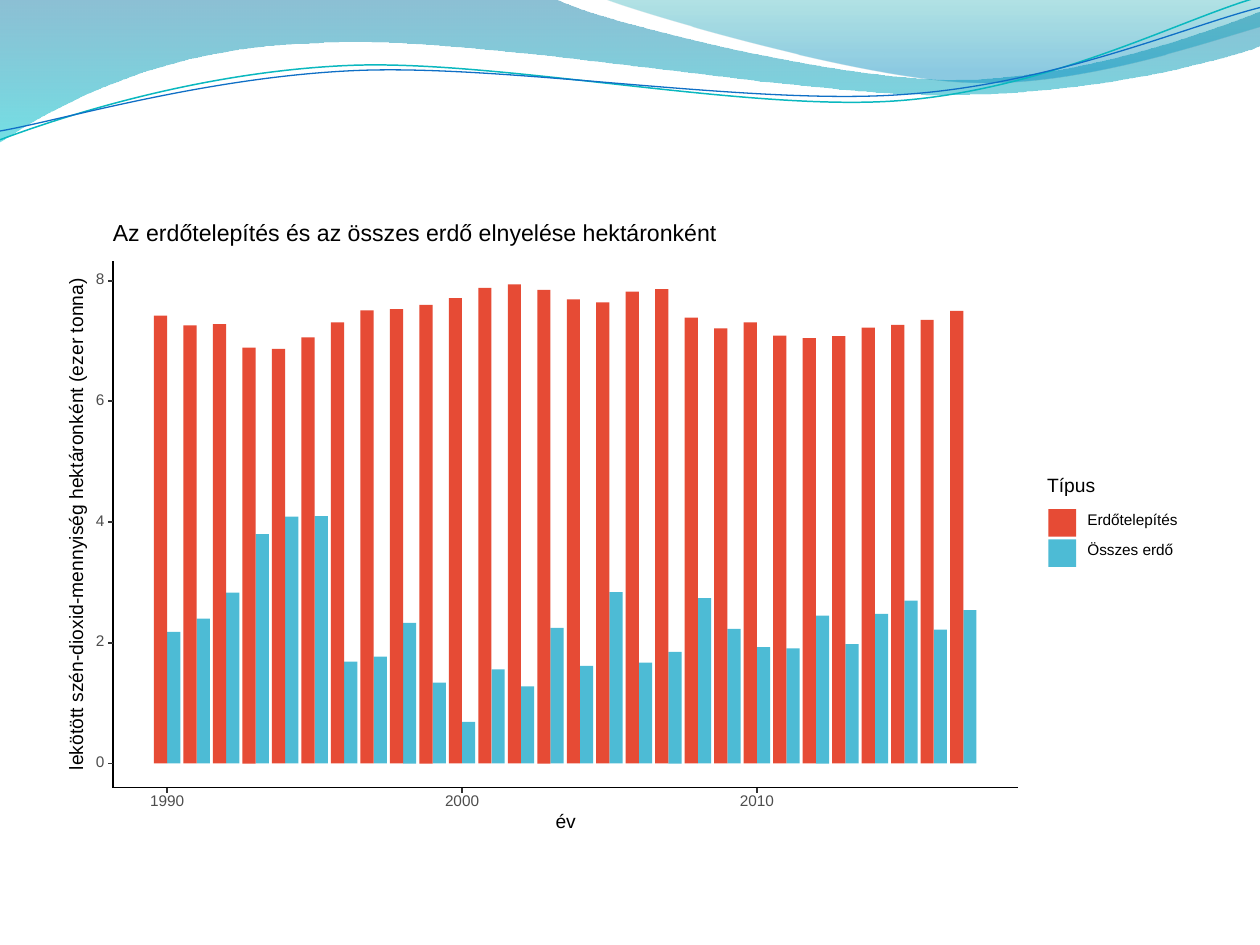
from typing import NamedTuple

from lxml.etree import SubElement
from pptx import Presentation
from pptx.dml.color import RGBColor
from pptx.enum.shapes import MSO_CONNECTOR, MSO_SHAPE
from pptx.enum.text import MSO_ANCHOR, PP_ALIGN
from pptx.oxml.ns import qn
from pptx.util import Emu, Inches, Pt

BLACK = RGBColor(0x00, 0x00, 0x00)
TICK_GREY = RGBColor(0x33, 0x33, 0x33)
LABEL_GREY = RGBColor(0x4D, 0x4D, 0x4D)
RED = RGBColor(0xE6, 0x4B, 0x35)
BLUE = RGBColor(0x4D, 0xBB, 0xD5)
TEAL_LINE = RGBColor(0x0A, 0xB8, 0xBF)
BLUE_LINE = RGBColor(0x0F, 0x6F, 0xC6)
DEEP_BLUE = RGBColor(0x00, 0x74, 0xA1)
CYAN = RGBColor(0x00, 0xC6, 0xCF)
TEAL = RGBColor(0x00, 0xA1, 0xA9)
SKY_BLUE = RGBColor(0x00, 0x8B, 0xBF)

# The slide is a grid of 100 columns by 75 rows of square cells.
SLIDE_WIDTH, SLIDE_HEIGHT = Inches(10), Inches(7.5)
CELL = SLIDE_WIDTH / 100


class Box(NamedTuple):
    left: float
    top: float
    width: float
    height: float


class Label(NamedTuple):
    text: str
    box: Box
    size: float
    color: RGBColor = BLACK
    alignment: PP_ALIGN = PP_ALIGN.LEFT
    rotation: int = 0


class Stop(NamedTuple):
    position: float
    color: RGBColor
    opacity: int


class Wave(NamedTuple):
    """Each step is one point for a straight edge or three for a cubic curve."""
    start: tuple
    steps: list
    stops: tuple = ()
    line_color: RGBColor | None = None
    line_width: float = 0


class Series(NamedTuple):
    name: str
    color: RGBColor
    values: tuple


AXIS_LEFT, AXIS_RIGHT, AXIS_TOP, AXIS_BOTTOM = 9, 80.8, 20.7, 62.5
TICK = 0.4
FIRST_YEAR, YEARS = 1990, 28
FIRST_YEAR_X, YEAR_STEP, BAR_WIDTH = 13.27, 2.34, 1.05
ZERO_Y, UNIT = 60.6, 4.79

SERIES = [
    Series("Erdőtelepítés", RED, (
        7.42, 7.26, 7.28, 6.89, 6.87, 7.06, 7.31, 7.51, 7.53, 7.6, 7.71, 7.88, 7.94, 7.85,
        7.69, 7.64, 7.82, 7.86, 7.39, 7.21, 7.31, 7.09, 7.05, 7.08, 7.22, 7.27, 7.35, 7.5)),
    Series("Összes erdő", BLUE, (
        2.18, 2.4, 2.83, 3.8, 4.09, 4.1, 1.69, 1.77, 2.33, 1.34, 0.69, 1.56, 1.28, 2.25,
        1.62, 2.84, 1.67, 1.85, 2.74, 2.23, 1.93, 1.91, 2.45, 1.98, 2.48, 2.7, 2.22, 2.54)),
]

WAVES = [
    Wave((0, 0), [
        [(44, -0.1)], [(47.6, 1.7), (66.4, 6.3), (75.8, 6.3)],
        [(85.3, 6.3), (95.8, 2.6), (100, 0.9)], [(100.1, 3.6)],
        [(98.3, 4.4), (87, 7.6), (74.6, 7.5)], [(62.2, 7.5), (38.2, 2.8), (25.7, 3.4)],
        [(12.9, 3.6), (4.6, 8.3), (-0.1, 11.3)],
    ], (Stop(0, DEEP_BLUE, 45), Stop(1, CYAN, 55))),
    Wave((47.9, -0.1), [
        [(50.9, 1.1), (68.2, 6.2), (76.9, 6.5)], [(85.6, 6.9), (96.1, 3.2), (100, 2.1)],
        [(100, 0)],
    ], (Stop(0, TEAL, 30), Stop(0.8, SKY_BLUE, 45))),
    Wave((0, 11.1), [
        [(4.8, 9.3), (15.8, 5.7), (27.7, 5.2)], [(39.5, 4.7), (59.3, 8.9), (71.3, 8)],
        [(83.3, 7.1), (93.8, 1.5), (99.8, -0.2)],
    ], line_color=TEAL_LINE, line_width=0.85),
    Wave((0, 10.4), [
        [(4.7, 9.6), (16.4, 6.1), (28.3, 5.6)], [(40.3, 5.1), (59.7, 8.4), (71.7, 7.5)],
        [(83.6, 6.7), (94.1, 2.1), (100, 0.6)],
    ], line_color=BLUE_LINE, line_width=0.75),
]

LABELS = [
    Label("év", Box(43.9, 64.75, 2, 1.1), 11, alignment=PP_ALIGN.CENTER),
    Label("lekötött szén-dioxid-mennyiség hektáronként (ezer tonna)",
          Box(-13.85, 40.9, 40, 1.4), 11, alignment=PP_ALIGN.CENTER, rotation=270),
    Label("Típus", Box(83.1, 37.95, 4.2, 1.4), 11),
    Label("Az erdőtelepítés és az összes erdő elnyelése hektáronként",
          Box(8.95, 17.8, 48.5, 1.7), 13.2),
]


def cells(count: float) -> Emu:
    return Emu(round(count * CELL))


def place(box: Box) -> list[Emu]:
    return [cells(length) for length in box]


def bend_edges(path, steps: list) -> None:
    """Join each run of three straight edges that stands for a curve into one curve."""
    edges = iter(path.findall(qn("a:lnTo")))
    for step in steps:
        group = [next(edges) for _ in step]
        if len(step) == 3:
            curve = path.makeelement(qn("a:cubicBezTo"))
            group[0].addprevious(curve)
            for edge in group:
                curve.append(edge[0])
                path.remove(edge)


def draw_wave(shapes, wave: Wave) -> None:
    start, *points = [(cells(x), cells(y)) for x, y in [wave.start, *sum(wave.steps, [])]]
    builder = shapes.build_freeform(*start, scale=1.0)
    builder.add_line_segments(points, close=bool(wave.stops))
    shape = builder.convert_to_shape()
    bend_edges(next(shape._element.iter(qn("a:path"))), wave.steps)
    shape.shadow.inherit = False
    if not wave.stops:
        shape.fill.background()
        shape.line.color.rgb = wave.line_color
        shape.line.width = Pt(wave.line_width)
        return
    shape.line.fill.background()
    shape.fill.gradient()
    shape.fill.gradient_angle = 270
    for gradient_stop, stop in zip(shape.fill.gradient_stops, wave.stops):
        gradient_stop.position = stop.position
        gradient_stop.color.rgb = stop.color
    for color, stop in zip(shape._element.spPr.iter(qn("a:srgbClr")), wave.stops):
        SubElement(color, qn("a:alpha"), val=str(stop.opacity * 1000))


def draw_rectangle(shapes, box: Box, color: RGBColor) -> None:
    shape = shapes.add_shape(MSO_SHAPE.RECTANGLE, *place(box))
    shape.shadow.inherit = False
    shape.fill.solid()
    shape.fill.fore_color.rgb = color
    shape.line.fill.background()


def draw_line(shapes, start: tuple, end: tuple, color: RGBColor) -> None:
    ends = [cells(length) for length in (*start, *end)]
    connector = shapes.add_connector(MSO_CONNECTOR.STRAIGHT, *ends)
    connector.line.color.rgb = color
    connector.line.width = Pt(1.07)
    SubElement(connector._element.spPr, qn("a:effectLst"))


def draw_label(shapes, label: Label) -> None:
    shape = shapes.add_textbox(*place(label.box))
    shape.rotation = label.rotation
    frame = shape.text_frame
    frame_format = {"margin_left": 0, "margin_top": 0, "margin_right": 0, "margin_bottom": 0,
                    "word_wrap": False, "vertical_anchor": MSO_ANCHOR.MIDDLE}
    for name, value in frame_format.items():
        setattr(frame, name, value)
    paragraph = frame.paragraphs[0]
    paragraph.alignment = label.alignment
    paragraph.line_spacing = Pt(label.size)
    run = paragraph.add_run()
    run.text = label.text
    for name, value in {"name": "Arial", "size": Pt(label.size)}.items():
        setattr(run.font, name, value)
    run.font.color.rgb = label.color


def draw_bars(shapes) -> None:
    """Draw each year's pair of bars, one on either side of the year's centre."""
    red, blue = SERIES
    for index, (red_value, blue_value) in enumerate(zip(red.values, blue.values)):
        x = FIRST_YEAR_X + YEAR_STEP * index
        for left, value, color in ((x, blue_value, blue.color),
                                   (x - BAR_WIDTH, red_value, red.color)):
            height = value * UNIT
            draw_rectangle(shapes, Box(left, ZERO_Y - height, BAR_WIDTH, height), color)


def draw_axes(shapes) -> None:
    corner = (AXIS_LEFT, AXIS_BOTTOM)
    draw_line(shapes, corner, (AXIS_LEFT, AXIS_TOP), BLACK)
    draw_line(shapes, corner, (AXIS_RIGHT, AXIS_BOTTOM), BLACK)
    for value in range(0, 9, 2):
        y = ZERO_Y - value * UNIT
        draw_line(shapes, (AXIS_LEFT - TICK, y), (AXIS_LEFT, y), TICK_GREY)
        draw_label(shapes, Label(str(value), Box(7.45, y - 0.5, 1, 0.9), 8.8, LABEL_GREY,
                                 PP_ALIGN.CENTER))
    for index in range(0, YEARS, 10):
        x = FIRST_YEAR_X + YEAR_STEP * index
        draw_line(shapes, (x, AXIS_BOTTOM + TICK), (x, AXIS_BOTTOM), TICK_GREY)
        draw_label(shapes, Label(str(FIRST_YEAR + index), Box(x - 1.6, 63.2, 3.2, 0.9),
                                 8.8, LABEL_GREY, PP_ALIGN.CENTER))


def draw_legend(shapes) -> None:
    for row, series in enumerate(SERIES):
        top = 40.4 + 2.4 * row
        draw_rectangle(shapes, Box(83.2, top, 2.2, 2.2), series.color)
        draw_label(shapes, Label(series.name, Box(86.3, top + 0.4, 7.5, 1.1), 8.8))


def main() -> None:
    presentation = Presentation()
    presentation.slide_width, presentation.slide_height = SLIDE_WIDTH, SLIDE_HEIGHT
    shapes = presentation.slides.add_slide(presentation.slide_layouts[6]).shapes
    for wave in WAVES:
        draw_wave(shapes, wave)
    draw_bars(shapes)
    draw_axes(shapes)
    draw_legend(shapes)
    for label in LABELS:
        draw_label(shapes, label)
    presentation.save("out.pptx")


if __name__ == "__main__":
    main()
